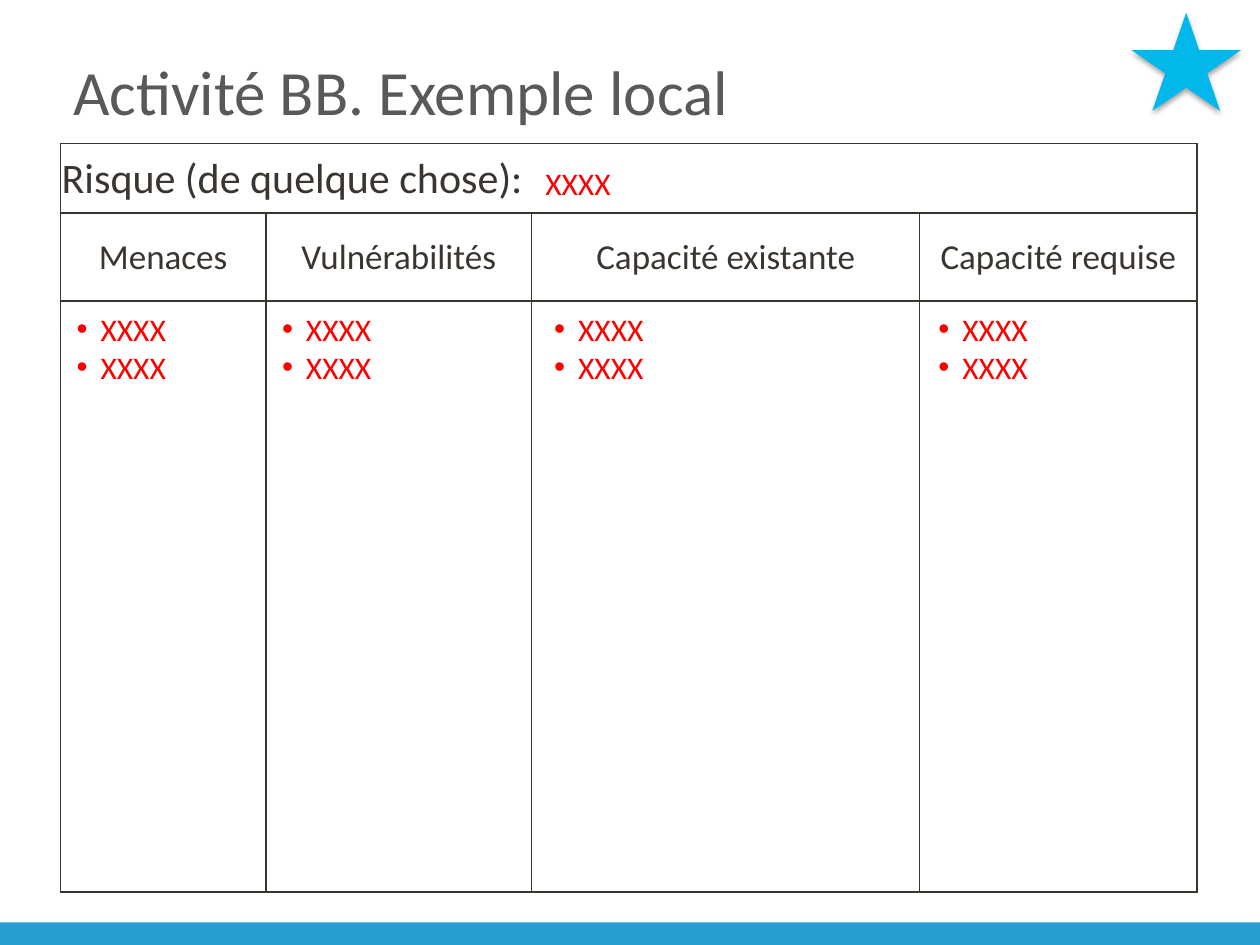
from lxml.etree import SubElement as Sub
from pptx import Presentation
from pptx.dml.color import RGBColor as RGB
from pptx.enum.shapes import MSO_SHAPE as SHAPE
from pptx.enum.text import MSO_ANCHOR as ANCHOR, PP_ALIGN as ALIGN
from pptx.oxml.ns import qn
from pptx.util import Inches, Pt

COLORS = {"bar": "279ECE", "title": "595959", "ink": "3B352F",
          "red": "FF0000", "star": "02B7EA", "shade": "000000"}


def style(para, size, color):
    para.font.name = "Calibri"
    para.font.size = Pt(size)
    para.font.color.rgb = RGB.from_string(COLORS[color])


def block(kind, left, top, width, height, color):
    shape = slide.shapes.add_shape(kind, Inches(left), Inches(top), Inches(width), Inches(height))
    shape.fill.solid()
    shape.fill.fore_color.rgb = RGB.from_string(COLORS[color])
    shape.line.fill.background()
    shape.shadow.inherit = False
    return shape


prs = Presentation()
prs.slide_width, prs.slide_height = Inches(10), Inches(7.5)
slide = prs.slides.add_slide(prs.slide_layouts[5])

block(SHAPE.RECTANGLE, 0, 7.32, 10.05, 0.21, "bar")

title = slide.shapes.title
title.left, title.top = Inches(0.48), Inches(0.19)
title.width, title.height = Inches(8.99), Inches(1.06)
title.text_frame.text = "Activité BB. Exemple local"
title.text_frame.vertical_anchor = ANCHOR.MIDDLE
title.text_frame.paragraphs[0].alignment = ALIGN.LEFT
style(title.text_frame.paragraphs[0], 36, "title")

widths = [1.63, 2.11, 3.08, 2.2]
heights = [0.55, 0.7, 4.69]
table = slide.shapes.add_table(3, 4, Inches(0.48), Inches(1.14),
                               Inches(sum(widths)), Inches(sum(heights))).table
table.first_row = table.horz_banding = False
for col, width in zip(table.columns, widths):
    col.width = Inches(width)
for row, height in zip(table.rows, heights):
    row.height = Inches(height)
table.cell(0, 0).merge(table.cell(0, 3))
table.cell(0, 0).text = "Risque (de quelque chose):"
heads = ["Menaces", "Vulnérabilités", "Capacité existante", "Capacité requise"]
for i, head in enumerate(heads):
    table.cell(1, i).text = head
    table.cell(1, i).text_frame.paragraphs[0].alignment = ALIGN.CENTER

for row, size in zip(table.rows, [24, 20, 18]):
    for cell in row.cells:
        cell.vertical_anchor = ANCHOR.MIDDLE
        cell.margin_left = cell.margin_top = cell.margin_right = Inches(0.01)
        cell.margin_bottom = 0
        style(cell.text_frame.paragraphs[0], size, "ink")
        props = cell._tc.get_or_add_tcPr()
        for side in ["lnL", "lnR", "lnT", "lnB"]:
            line = Sub(props, qn("a:" + side), w=str(Pt(1)))
            Sub(Sub(line, qn("a:solidFill")), qn("a:srgbClr"), val=COLORS["ink"])
        cell.fill.background()

risk = slide.shapes.add_textbox(Inches(4.23), Inches(1.25), Inches(5.23), Inches(0.4)).text_frame
risk.word_wrap = True
risk.text = "XXXX"
style(risk.paragraphs[0], 18, "red")

star = block(SHAPE.STAR_5_POINT, 8.98, 0.1, 0.87, 0.78, "star")
glow = Sub(star._element.spPr.find(qn("a:effectLst")), qn("a:outerShdw"),
           blurRad=str(Pt(3.1)), dist=str(Pt(1.8)), dir="5400000", rotWithShape="0")
Sub(Sub(glow, qn("a:srgbClr"), val=COLORS["shade"]), qn("a:alpha"), val="35000")

for left in [0.51, 2.14, 4.3, 7.35]:
    items = slide.shapes.add_textbox(Inches(left), Inches(2.41), Inches(1.26), Inches(0.71)).text_frame
    items.word_wrap = True
    items.text = "XXXX\nXXXX"
    for para in items.paragraphs:
        props = para._p.get_or_add_pPr()
        props.set("marL", str(Inches(0.19)))
        props.set("indent", str(-Inches(0.19)))
        Sub(props, qn("a:buFont"), typeface="Arial")
        Sub(props, qn("a:buChar"), char="•")
        style(para, 18, "red")

prs.save("out.pptx")
